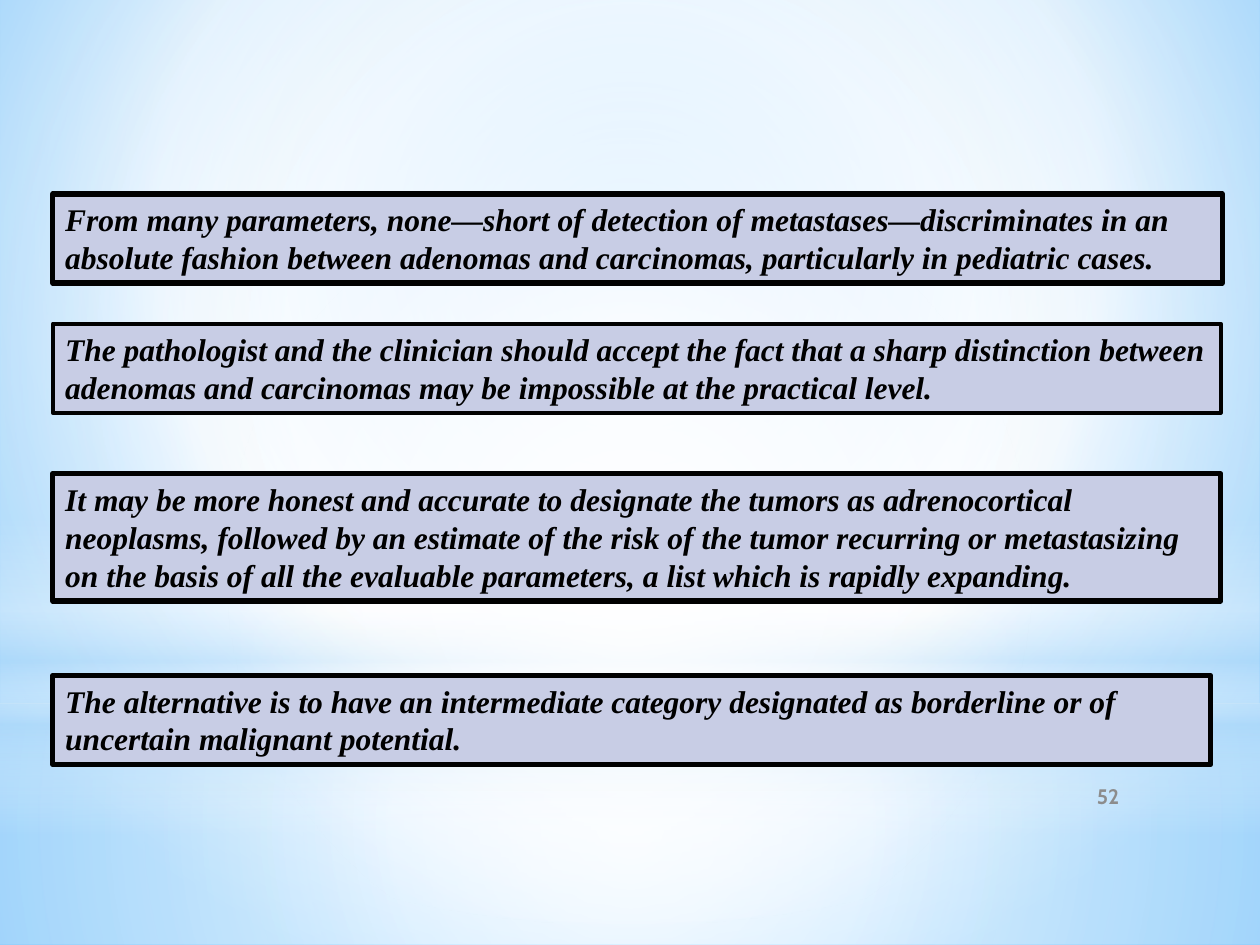
import pptx
import pptx.util
import pptx.oxml
import pptx.oxml.ns
from pptx.dml.color import RGBColor
from pptx.enum.shapes import MSO_SHAPE
from pptx.enum.text import MSO_ANCHOR, MSO_AUTO_SIZE, PP_ALIGN

Pt = pptx.util.Pt

BLACK = RGBColor(0x00, 0x00, 0x00)
LAVENDER = RGBColor(0xC8, 0xCD, 0xE5)
GREY = RGBColor(0x8C, 0x8C, 0x8C)
WHITE = RGBColor(0xFF, 0xFF, 0xFF)
PALE_BLUE = RGBColor(0xB4, 0xDC, 0xFA)
SKY_BLUE = RGBColor(0x9E, 0xD5, 0xFF)
DEEP_BLUE = RGBColor(0x5B, 0xB9, 0xFF)

SLIDE_WIDTH, SLIDE_HEIGHT = 720, 540
BOX_LEFT = 30.2
CENTRE = (50, 50, 50, 50)

# Gradient stops: position %, colour, opacity %
BACKDROP_STOPS = [(0, SKY_BLUE, 100), (60, WHITE, 100), (100, DEEP_BLUE, 100)]
BACKDROP_FOCUS = (20, 10, 20, 60)

# Shape, top, height, stops, focus (None for a vertical gradient)
GLOWS = [
    (MSO_SHAPE.RECTANGLE, 401.8, 138.2,
     [(0, WHITE, 91), (37, WHITE, 76), (100, PALE_BLUE, 79)], CENTRE),
    (MSO_SHAPE.RECTANGLE, 0, 401.8,
     [(0, WHITE, 89), (48, WHITE, 62), (100, PALE_BLUE, 79)], CENTRE),
    (MSO_SHAPE.RECTANGLE, 296.6, 180,
     [(0, WHITE, 0), (29, WHITE, 30), (45, PALE_BLUE, 40),
      (55, WHITE, 26), (65, PALE_BLUE, 60), (100, WHITE, 0)], None),
    (MSO_SHAPE.OVAL, 126, 401.8, [(0, WHITE, 100), (56, WHITE, 0)], CENTRE),
]

# Top, width, height, border width, text
STATEMENTS = [
    (110.9, 668.2, 50.9, 3,
     "From many parameters, none—short of detection of metastases—discriminates "
     "in an absolute fashion between adenomas and carcinomas, particularly in "
     "pediatric cases."),
    (185, 667.4, 50.9, 2.25,
     "The pathologist and the clinician should accept the fact that a sharp "
     "distinction between adenomas and carcinomas may be impossible at the "
     "practical level."),
    (270.7, 667.4, 72.7, 3,
     "It may be more honest and accurate to designate the tumors as "
     "adrenocortical neoplasms, followed by an estimate of the risk of the tumor "
     "recurring or metastasizing on the basis of all the evaluable parameters, "
     "a list which is rapidly expanding."),
    (386, 661.7, 50.9, 3,
     "The alternative is to have an intermediate category designated as "
     "borderline or of uncertain malignant potential."),
]
PAGE_NUMBER = "52"


def fill_gradient(owner, element, stops, focus):
    """Give owner, whose XML is element, a gradient with per-stop opacity."""
    owner.fill.background()
    stop_xml = "".join(
        f'<a:gs pos="{position * 1000}"><a:srgbClr val="{colour}">'
        f'<a:alpha val="{opacity * 1000}"/></a:srgbClr></a:gs>'
        for position, colour, opacity in stops)
    if focus:
        sides = " ".join(f'{side}="{value * 1000}"' for side, value in zip("ltrb", focus))
        direction = f'<a:path path="circle"><a:fillToRect {sides}/></a:path>'
    else:
        direction = '<a:lin ang="5400000" scaled="0"/>'
    gradient = pptx.oxml.parse_xml(
        f'<a:gradFill {pptx.oxml.ns.nsdecls("a")} rotWithShape="1">'
        f'<a:gsLst>{stop_xml}</a:gsLst>{direction}</a:gradFill>')
    empty_fill = element.find(".//" + pptx.oxml.ns.qn("a:noFill"))
    empty_fill.getparent().replace(empty_fill, gradient)


def format_run(run, font_name, size, colour, italic):
    run.font.name = font_name
    run.font.size = Pt(size)
    run.font.color.rgb = colour
    run.font.bold = True
    run.font.italic = italic


def add_glow(slide, kind, top, height, stops, focus):
    glow = slide.shapes.add_shape(kind, 0, Pt(top), Pt(SLIDE_WIDTH), Pt(height))
    glow.shadow.inherit = False
    fill_gradient(glow, glow._element, stops, focus)
    glow.line.fill.background()


def add_statement(slide, top, width, height, border, text):
    box = slide.shapes.add_shape(
        MSO_SHAPE.RECTANGLE, Pt(BOX_LEFT), Pt(top), Pt(width), Pt(height))
    box.shadow.inherit = False
    box.fill.solid()
    box.fill.fore_color.rgb = LAVENDER
    box.line.color.rgb = BLACK
    box.line.width = Pt(border)
    frame = box.text_frame
    frame.word_wrap = True
    frame.auto_size = MSO_AUTO_SIZE.SHAPE_TO_FIT_TEXT
    frame.vertical_anchor = MSO_ANCHOR.TOP
    frame.text = text
    paragraph = frame.paragraphs[0]
    paragraph.alignment = PP_ALIGN.LEFT
    format_run(paragraph.runs[0], "Times New Roman", 18, BLACK, True)


def add_page_number(slide):
    frame = slide.shapes.add_textbox(Pt(600.5), Pt(445.7), Pt(65.5), Pt(18.7)).text_frame
    frame.word_wrap = True
    frame.vertical_anchor = MSO_ANCHOR.MIDDLE
    frame.text = PAGE_NUMBER
    paragraph = frame.paragraphs[0]
    paragraph.alignment = PP_ALIGN.CENTER
    format_run(paragraph.runs[0], "Cabin", 12, GREY, False)


def main():
    deck = pptx.Presentation()
    deck.slide_width, deck.slide_height = Pt(SLIDE_WIDTH), Pt(SLIDE_HEIGHT)
    slide = deck.slides.add_slide(deck.slide_layouts[6])
    fill_gradient(slide.background, slide._element, BACKDROP_STOPS, BACKDROP_FOCUS)
    for glow in GLOWS:
        add_glow(slide, *glow)
    add_page_number(slide)
    for statement in STATEMENTS:
        add_statement(slide, *statement)
    deck.save("out.pptx")


if __name__ == "__main__":
    main()
